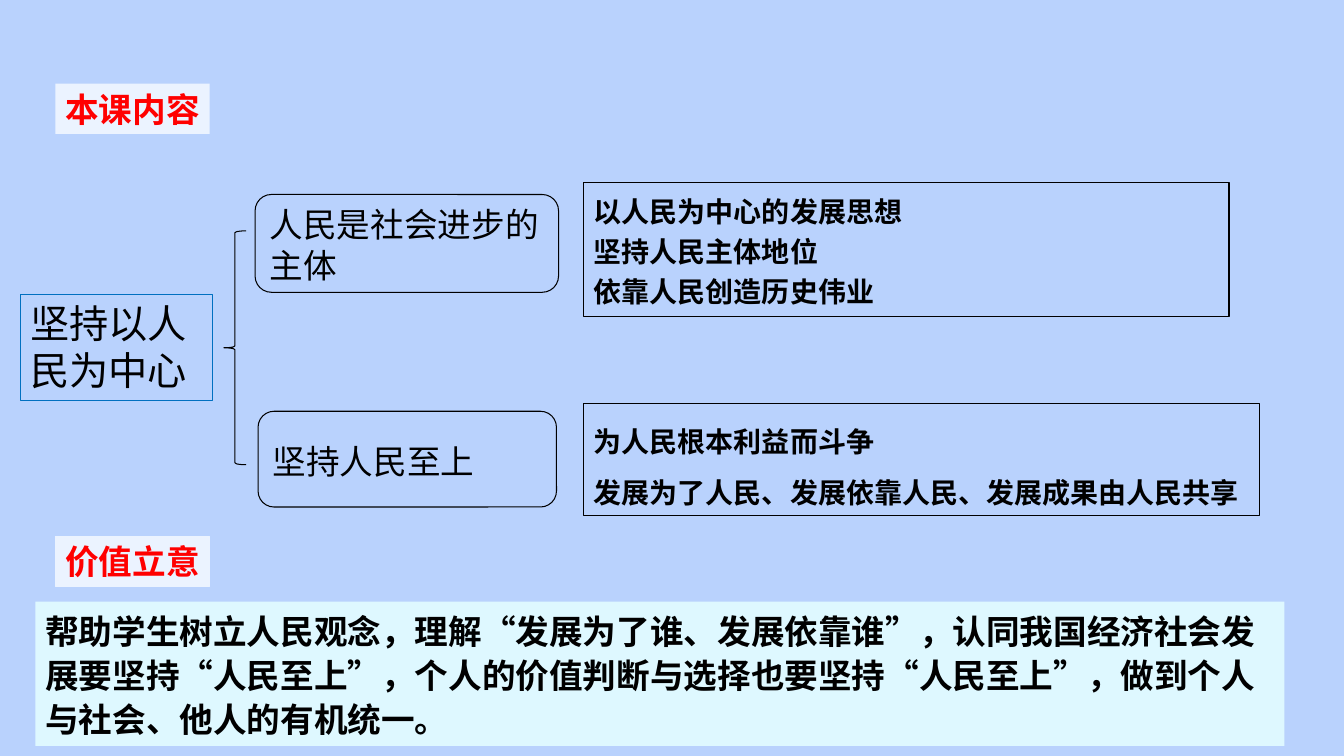
from dataclasses import dataclass
from lxml import etree
from pptx import Presentation
from pptx.dml.color import RGBColor
from pptx.enum.lang import MSO_LANGUAGE_ID
from pptx.enum.shapes import MSO_SHAPE
from pptx.enum.text import MSO_ANCHOR, MSO_AUTO_SIZE, PP_ALIGN
from pptx.oxml.ns import qn
from pptx.util import Pt

RECT, ROUND, BRACE = MSO_SHAPE.RECTANGLE, MSO_SHAPE.ROUNDED_RECTANGLE, MSO_SHAPE.LEFT_BRACE
TOP, LEFT = MSO_ANCHOR.TOP, PP_ALIGN.LEFT
GROW, FIXED = MSO_AUTO_SIZE.SHAPE_TO_FIT_TEXT, MSO_AUTO_SIZE.NONE
CHINESE = MSO_LANGUAGE_ID.SIMPLIFIED_CHINESE
PX = 9144


@dataclass(frozen=True)
class Theme:
    back: str = "B9D2FD"
    ink: str = "000000"
    accent: str = "FF0000"
    frame: str = "0070C0"
    label: str = "EBF3FF"
    panel: str = "DEF8FF"
    cjk: str = "Noto Sans CJK SC"
    latin: str = "Arial"
    root: int = 28
    body: int = 24
    detail: int = 20
    rule: float = 0.75


T = Theme()


def rgb(value):
    return RGBColor.from_string(value)


def add_box(s, kind, box, fill=None, line=None):
    sp = s.shapes.add_shape(kind, *(v * PX for v in box))
    sp.shadow.inherit = False
    if fill:
        sp.fill.solid()
        sp.fill.fore_color.rgb = rgb(fill)
    else:
        sp.fill.background()
    if line:
        sp.line.color.rgb = rgb(line)
        sp.line.width = Pt(T.rule)
    else:
        sp.line.fill.background()
    return sp


def write(sp, lines, size, color=T.ink, font=T.cjk, bold=False, wrap=True, grow=False, **spacing):
    tf = sp.text_frame
    frame = {"word_wrap": wrap, "auto_size": GROW if grow else FIXED, "vertical_anchor": TOP}
    for key, value in frame.items():
        setattr(tf, key, value)
    style = {"name": font, "size": Pt(size), "bold": bold, "language_id": CHINESE}
    for i, text in enumerate(lines):
        p = tf.add_paragraph() if i else tf.paragraphs[0]
        for key, value in {"alignment": LEFT, **spacing}.items():
            setattr(p, key, value)
        r = p.add_run()
        r.text = text
        for key, value in style.items():
            setattr(r.font, key, value)
        r.font.color.rgb = rgb(color)
        ea = etree.SubElement(r._r.get_or_add_rPr(), qn("a:ea"))
        ea.set("typeface", T.cjk)


def section_label(s, box, text, line=None):
    sp = add_box(s, RECT, box, T.label, line)
    write(sp, [text], T.body, T.accent, bold=True, wrap=False, grow=True, space_after=Pt(10))


def branch(s, topic_box, topic, topic_spacing, detail_box, details, detail_spacing):
    sp = add_box(s, ROUND, topic_box, line=T.ink)
    write(sp, [topic], T.body, line_spacing=topic_spacing)
    sp = add_box(s, RECT, detail_box, line=T.ink)
    write(sp, details, T.detail, font=T.latin, bold=True, line_spacing=detail_spacing)


def outline(s, x, y):
    root = add_box(s, RECT, (x, y + 111, 191, 105), line=T.frame)
    write(root, ["坚持以人民为中心"], T.root)
    add_box(s, BRACE, (x + 202, y + 48, 22, 232), line=T.ink)
    branch(s, (x + 233, y + 12, 301, 97), "人民是社会进步的主体", 1.0,
           (x + 559, y, 640, 133),
           ["以人民为中心的发展思想", "坚持人民主体地位", "依靠人民创造历史伟业"], 1.2)
    branch(s, (x + 236, y + 227, 296, 95), "坚持人民至上", 1.5,
           (x + 559, y + 219, 670, 111),
           ["为人民根本利益而斗争", "发展为了人民、发展依靠人民、发展成果由人民共享"], 1.5)


def value_panel(s, box):
    text = ("帮助学生树立人民观念，理解“发展为了谁、发展依靠谁”，认同我国经济社会发展要坚持“人民至上”，"
            "个人的价值判断与选择也要坚持“人民至上”，做到个人与社会、他人的有机统一。")
    sp = add_box(s, RECT, box, T.panel)
    write(sp, [text], T.body, bold=True, grow=True, line_spacing=1.1)


def main():
    prs = Presentation()
    prs.slide_width, prs.slide_height = 1333 * PX, 750 * PX
    s = prs.slides.add_slide(prs.slide_layouts[6])
    s.background.fill.solid()
    s.background.fill.fore_color.rgb = rgb(T.back)
    outline(s, 20, 181)
    value_panel(s, (35, 597, 1239, 143))
    section_label(s, (55, 532, 153, 50), "价值立意", T.label)
    section_label(s, (55, 83, 153, 50), "本课内容")
    prs.save("out.pptx")


if __name__ == "__main__":
    main()
